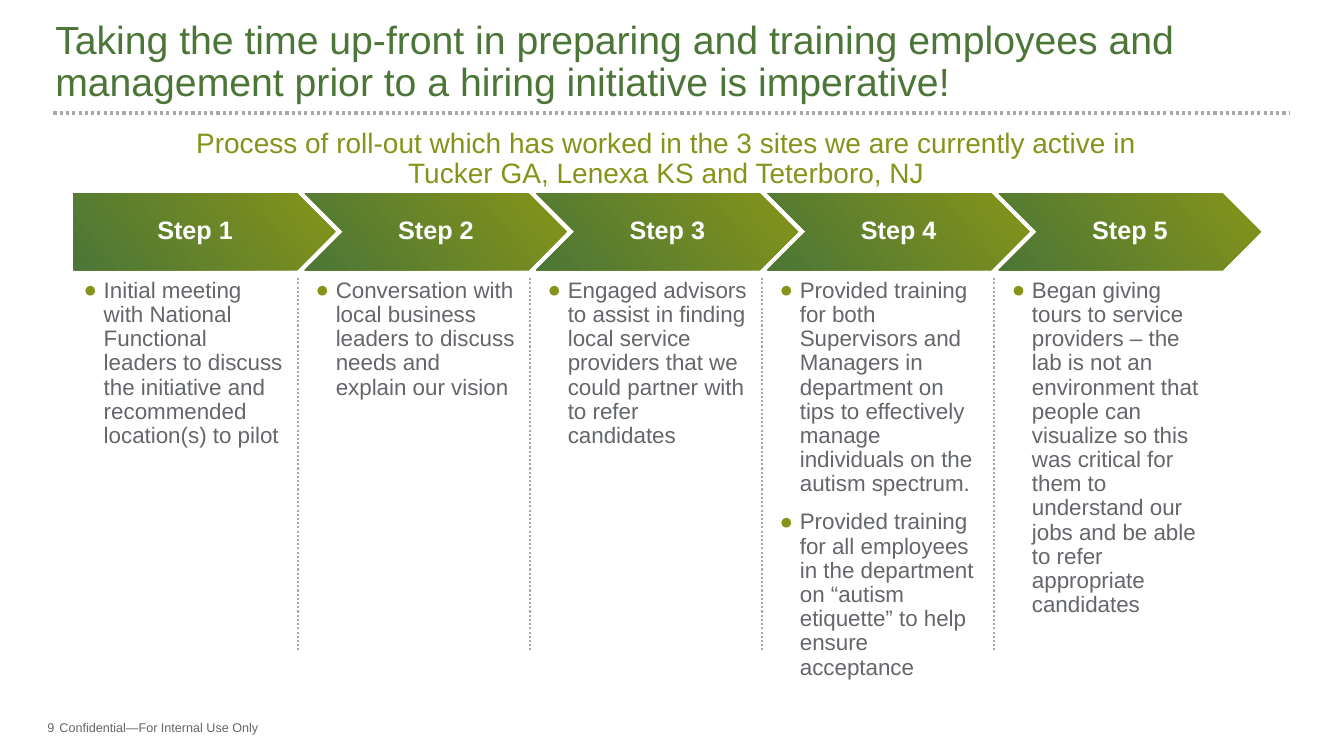
from pptx import Presentation
from pptx.dml.color import RGBColor
from pptx.enum.dml import MSO_LINE
from pptx.enum.shapes import MSO_CONNECTOR, MSO_SHAPE
from pptx.enum.text import MSO_ANCHOR, PP_ALIGN
from pptx.oxml.ns import qn
from pptx.util import Pt
from lxml.etree import SubElement

GREEN = RGBColor(0x4C, 0x76, 0x37)
OLIVE = RGBColor(0x85, 0x94, 0x19)
GRAY = RGBColor(0x63, 0x66, 0x6A)
RULE_GRAY = RGBColor(0xA7, 0xA8, 0xAA)
WHITE = RGBColor(0xFF, 0xFF, 0xFF)

TITLE = ("Taking the time up-front in preparing and training employees and "
         "management prior to a hiring initiative is imperative!")
SUBTITLE = [
    "Process of roll-out which has worked in the 3 sites we are currently active in",
    "Tucker GA, Lenexa KS and Teterboro, NJ",
]
STEPS = [
    ["Initial meeting with National Functional leaders to discuss the initiative "
     "and recommended location(s) to pilot"],
    ["Conversation with local business leaders to discuss needs and explain our vision"],
    ["Engaged advisors to assist in finding local service providers that we could "
     "partner with to refer candidates"],
    ["Provided training for both Supervisors and Managers in department on tips to "
     "effectively manage individuals on the autism spectrum.",
     "Provided training for all employees in the department on “autism etiquette” "
     "to help ensure acceptance"],
    ["Began giving tours to service providers – the lab is not an environment that "
     "people can visualize so this was critical for them to understand our jobs and "
     "be able to refer appropriate candidates"],
]


def add_bullet(paragraph):
    """Give a paragraph a hanging olive bullet."""
    properties = paragraph._p.get_or_add_pPr()
    properties.set("marL", str(Pt(14.4)))
    properties.set("indent", str(-Pt(14.4)))
    color = SubElement(properties, qn("a:buClr"))
    SubElement(color, qn("a:srgbClr"), val=str(OLIVE))
    SubElement(properties, qn("a:buFont"), typeface="Arial")
    SubElement(properties, qn("a:buChar"), char="●")


def write_text(shape, texts, size, color, align=PP_ALIGN.LEFT, anchor=MSO_ANCHOR.TOP,
               margins=(7.2, 3.6, 7.2, 3.6), bold=False, bullets=False):
    """Fill a shape with one styled run per paragraph."""
    frame = shape.text_frame
    frame.word_wrap = True
    frame.vertical_anchor = anchor
    (frame.margin_left, frame.margin_top,
     frame.margin_right, frame.margin_bottom) = map(Pt, margins)
    for index, text in enumerate(texts):
        paragraph = frame.add_paragraph() if index else frame.paragraphs[0]
        if bullets:
            add_bullet(paragraph)
            if index:
                paragraph.space_before = Pt(10)
        paragraph.alignment = align
        paragraph.line_spacing = 0.9
        run = paragraph.add_run()
        run.text = text
        run.font.name = "Arial"
        run.font.size = Pt(size)
        run.font.bold = bold
        run.font.color.rgb = color


def add_text(slide, box, texts, size, color, **style):
    """Add a text box at box (left, top, width, height)."""
    write_text(slide.shapes.add_textbox(*map(Pt, box)), texts, size, color, **style)


def add_rule(slide, start, end, width):
    """Draw a dotted gray line between two points."""
    rule = slide.shapes.add_connector(MSO_CONNECTOR.STRAIGHT, *map(Pt, start + end))
    rule.line.color.rgb = RULE_GRAY
    rule.line.width = Pt(width)
    rule.line.dash_style = MSO_LINE.ROUND_DOT
    SubElement(rule._element.spPr, qn("a:effectLst"))


def add_heading(slide, left, top, width):
    """Place the title, its dotted rule and the subtitle."""
    add_text(slide, (left, top, width, 69.1), [TITLE], 28, GREEN,
             anchor=MSO_ANCHOR.BOTTOM)
    add_rule(slide, (left + 5.8, top + 71.3), (left + 889.2, top + 71.3), 2.25)
    add_text(slide, (left, top + 79.2, width, 51.1), SUBTITLE, 20, OLIVE,
             align=PP_ALIGN.CENTER)


def add_step_arrow(slide, box, number):
    """Draw the gradient arrow that names a step."""
    first = number == 1
    kind = MSO_SHAPE.PENTAGON if first else MSO_SHAPE.CHEVRON
    arrow = slide.shapes.add_shape(kind, *map(Pt, box))
    arrow.shadow.inherit = False
    arrow.line.fill.background()
    arrow.fill.gradient()
    arrow.fill.gradient_angle = 220
    for stop, color in zip(arrow.fill.gradient_stops, (OLIVE, GREEN)):
        stop.color.rgb = color
    side = 7.2 if first else 0.72
    write_text(arrow, [f"Step {number}"], 18, WHITE, align=PP_ALIGN.CENTER,
               anchor=MSO_ANCHOR.MIDDLE, margins=(side, 3.6, side, 3.6), bold=True)


def add_process(slide, left, top):
    """Lay out the step arrows, their bullet columns and the dividers."""
    arrow_pitch, column_pitch = 165.25, 165.75
    for index, bullets in enumerate(STEPS):
        column_left = left + index * column_pitch
        add_text(slide, (column_left, top + 54, 157, 277.2), bullets, 16, GRAY,
                 margins=(7.2, 7.2, 7.2, 3.6), bullets=True)
        add_step_arrow(slide, (left + index * arrow_pitch, top, 187.2, 54.7), index + 1)
        if index:
            divider = column_left - 5.4
            add_rule(slide, (divider, top + 60.5), (divider, top + 327.6), 1.5)


def add_footer(slide, left, top):
    """Place the page number and the confidentiality line."""
    style = {"anchor": MSO_ANCHOR.BOTTOM, "margins": (0, 0, 0, 0)}
    add_text(slide, (left, top, 33.8, 10.4), ["9"], 9, GRAY,
             align=PP_ALIGN.RIGHT, **style)
    add_text(slide, (left + 37.5, top, 501, 10.6),
             ["Confidential—For Internal Use Only"], 9, GRAY, **style)


def main():
    """Build the slide and save it."""
    presentation = Presentation()
    presentation.slide_width = Pt(960)
    presentation.slide_height = Pt(540)
    slide = presentation.slides.add_slide(presentation.slide_layouts[6])
    add_heading(slide, 32.4, 9.4, 887)
    add_process(slide, 52.6, 138.2)
    add_footer(slide, 5, 514.8)
    presentation.save("out.pptx")


if __name__ == "__main__":
    main()
